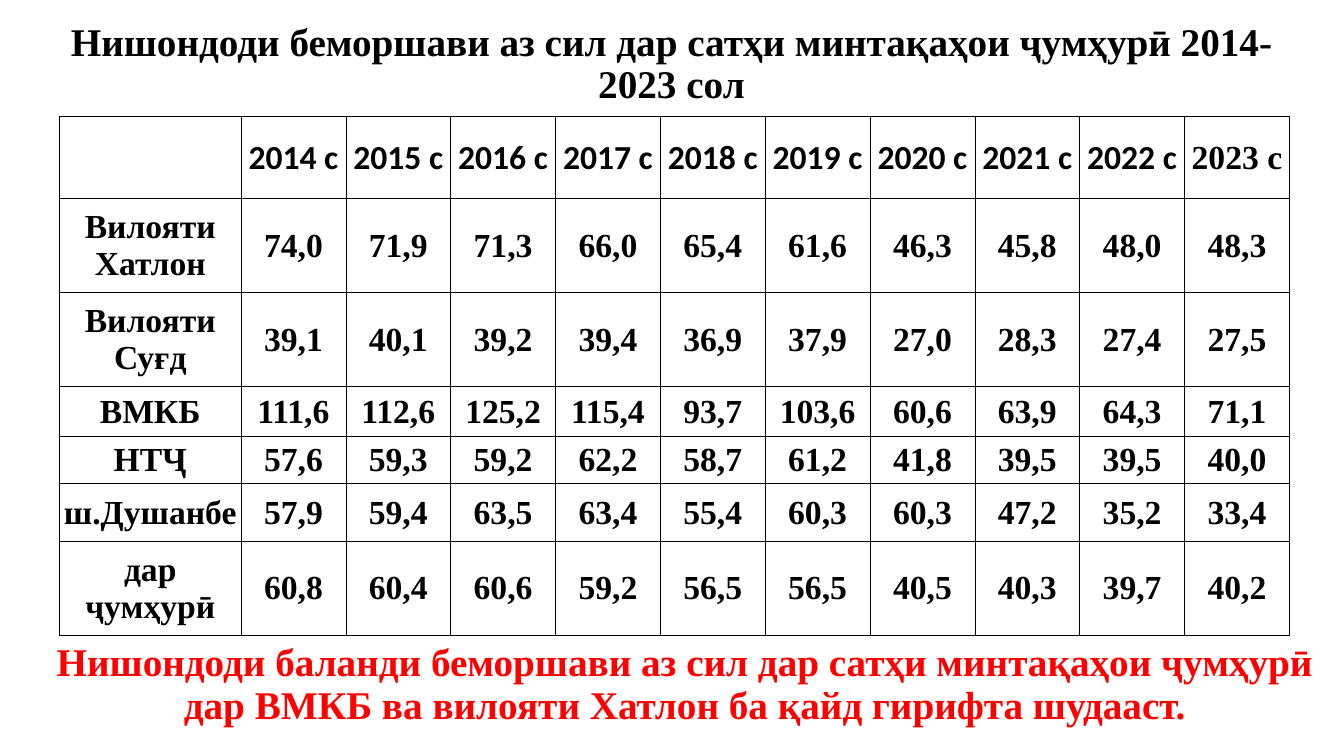
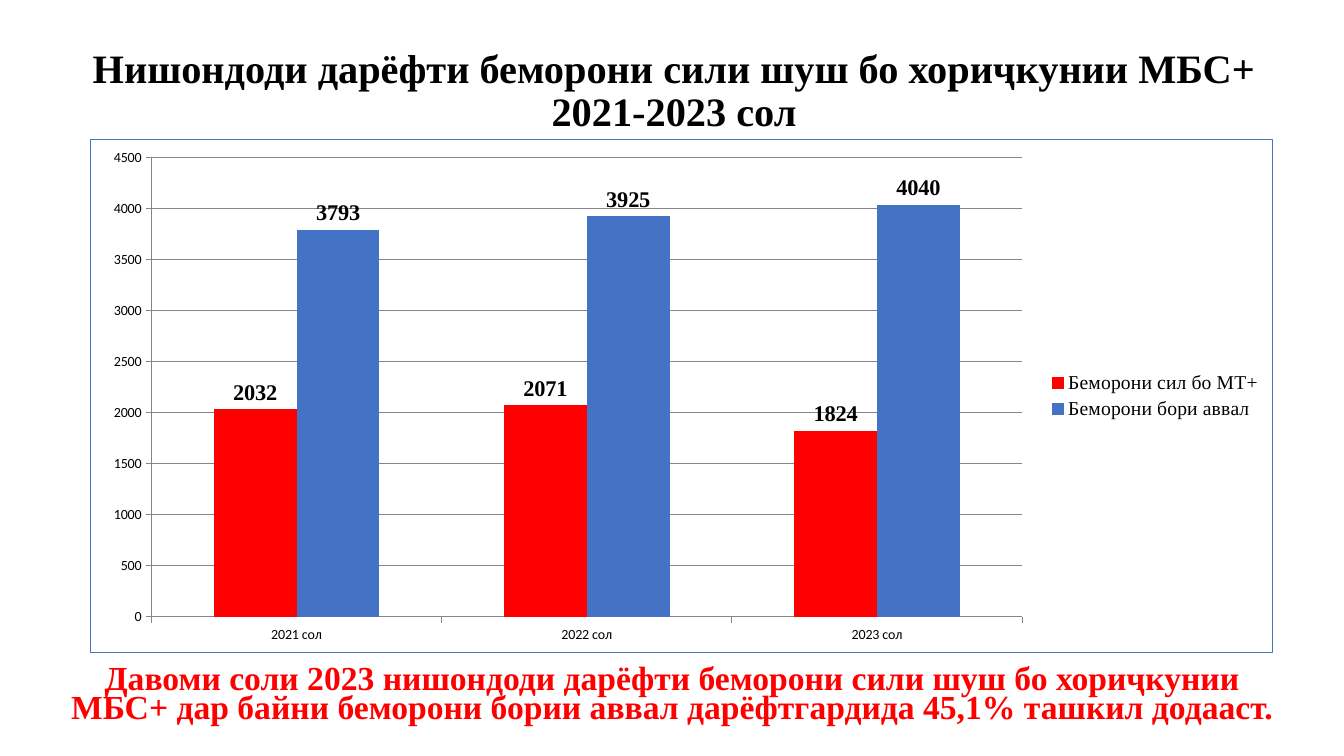
"""Build two slides on tuberculosis figures: a table by region and a column chart."""
from dataclasses import dataclass

from pptx import Presentation, util as u, oxml
from pptx.chart import data as cd
from pptx.dml import color as col
from pptx.enum import chart as ch, text as tx
from pptx.oxml import ns

PX = 9144


@dataclass(frozen=True)
class Theme:
    """Hold the colours, fonts and type sizes."""
    ink: str = "000000"
    red: str = "FF0000"
    blue: str = "4472C4"
    grid: str = "868686"
    serif: str = "Times New Roman"
    sans: str = "Calibri"
    head: float = 28
    large: float = 28.8
    cell: float = 24
    label: float = 16
    legend: float = 14
    axis: float = 10


T = Theme()

YEARS = [f"{y} c" for y in range(2014, 2023)] + ["2023 с"]
RATES = {
    "Вилояти Хатлон": "74,0 71,9 71,3 66,0 65,4 61,6 46,3 45,8 48,0 48,3",
    "Вилояти Суғд": "39,1 40,1 39,2 39,4 36,9 37,9 27,0 28,3 27,4 27,5",
    "ВМКБ": "111,6 112,6 125,2 115,4 93,7 103,6 60,6 63,9 64,3 71,1",
    "НТҶ": "57,6 59,3 59,2 62,2 58,7 61,2 41,8 39,5 39,5 40,0",
    "ш.Душанбе": "57,9 59,4 63,5 63,4 55,4 60,3 60,3 47,2 35,2 33,4",
    "дар ҷумҳурӣ": "60,8 60,4 60,6 59,2 56,5 56,5 40,5 40,3 39,7 40,2",
}
COLS = [180] + [104] * len(YEARS)
ROWS = [82, 93, 93, 50, 47, 57, 93]
CASES = {
    "Беморони сил бо МТ+": (T.red, (2032, 2071, 1824)),
    "Беморони бори аввал": (T.blue, (3793, 3925, 4040)),
}


def px(*nums):
    """Turn px lengths into EMU."""
    return [u.Emu(n * PX) for n in nums]


def put(obj, **vals):
    """Set each given attribute on an object."""
    for key, val in vals.items():
        setattr(obj, key, val)


def style(font, size, name=T.serif, tint=T.ink, bold=True):
    """Format a font."""
    put(font, size=u.Pt(size), name=name, bold=bold)
    font.color.rgb = col.RGBColor.from_string(tint)


def fill(frame, words, size, name=T.serif, tint=T.ink, gap=None):
    """Write one centred paragraph into a text frame."""
    para = frame.paragraphs[0]
    put(para, alignment=tx.PP_ALIGN.CENTER, line_spacing=gap)
    run = para.add_run()
    run.text = words
    style(run.font, size, name, tint)


def block(shape, box, words, size, tint=T.ink, gap=0.9):
    """Place a text shape and write its words."""
    left, top, width, height = px(*box)
    put(shape, left=left, top=top, width=width, height=height)
    put(shape.text_frame, word_wrap=True, auto_size=tx.MSO_AUTO_SIZE.NONE,
        vertical_anchor=tx.MSO_ANCHOR.MIDDLE)
    fill(shape.text_frame, words, size, tint=tint, gap=gap)


def page(deck, box, words, size):
    """Add a slide with its title."""
    slide = deck.slides.add_slide(deck.slide_layouts[5])
    block(slide.shapes.title, box, words, size)
    return slide


def note(slide, box, words, size, gap):
    """Add the red summary under the figures."""
    block(slide.shapes.add_textbox(*px(*box)), box, words, size, T.red, gap)


def line(tag, tint, width):
    """Return a solid line element."""
    return oxml.parse_xml(
        f'<a:{tag} {ns.nsdecls("a")} w="{int(u.Pt(width))}"><a:solidFill>'
        f'<a:srgbClr val="{tint}"/></a:solidFill></a:{tag}>')


def edge(cell):
    """Draw the four borders of a cell."""
    props = cell._tc.get_or_add_tcPr()
    for tag in ("lnL", "lnR", "lnT", "lnB"):
        props.append(line(tag, T.ink, 0.5))


def table(slide, left, top):
    """Add the table of rates by region and year."""
    rows = [["", *YEARS]] + [[k, *v.split()] for k, v in RATES.items()]
    box = px(left, top, sum(COLS), sum(ROWS))
    grid = slide.shapes.add_table(len(ROWS), len(COLS), *box).table
    put(grid, first_row=False, horz_banding=False)
    for part, size in zip(grid.columns, px(*COLS)):
        part.width = size
    for part, size in zip(grid.rows, px(*ROWS)):
        part.height = size
    side, none = px(1, 0)
    for r, row in enumerate(rows):
        for c, words in enumerate(row):
            cell = grid.cell(r, c)
            edge(cell)
            cell.fill.background()
            put(cell, margin_left=side, margin_right=side, margin_top=side,
                margin_bottom=none, vertical_anchor=tx.MSO_ANCHOR.MIDDLE)
            if words:
                name = T.sans if r == 0 and c < len(YEARS) else T.serif
                fill(cell.text_frame, words, T.cell, name)


def frame(chart):
    """Draw the border around a chart."""
    props = oxml.parse_xml(f'<c:spPr {ns.nsdecls("c", "a")}><a:noFill/></c:spPr>')
    props.append(line("ln", T.blue, 0.75))
    chart.element.find(ns.qn("c:chart")).addnext(props)


def graph(slide, box):
    """Add the column chart of cases by year."""
    data = cd.CategoryChartData()
    data.categories = [f"{y} сол" for y in range(2021, 2024)]
    for name, (_, vals) in CASES.items():
        data.add_series(name, vals)
    kind = ch.XL_CHART_TYPE.COLUMN_CLUSTERED
    chart = slide.shapes.add_chart(kind, *px(*box), data).chart
    style(chart.font, T.axis, T.sans, bold=False)
    put(chart, has_title=False, has_legend=True)
    put(chart.legend, position=ch.XL_LEGEND_POSITION.RIGHT, include_in_layout=False)
    style(chart.legend.font, T.legend, bold=False)
    plot = chart.plots[0]
    put(plot, gap_width=150, overlap=0, vary_by_categories=False)
    for bars, (tint, _) in zip(plot.series, CASES.values()):
        bars.format.fill.solid()
        bars.format.fill.fore_color.rgb = col.RGBColor.from_string(tint)
        tags = bars.data_labels
        put(tags, show_value=True, position=ch.XL_LABEL_POSITION.OUTSIDE_END)
        style(tags.font, T.label)
    axis = chart.value_axis
    put(axis, minimum_scale=0, maximum_scale=4500, major_unit=500,
        has_major_gridlines=True)
    for part in (axis, chart.category_axis):
        part.major_tick_mark = ch.XL_TICK_MARK.OUTSIDE
    for part in (axis, chart.category_axis, axis.major_gridlines):
        part.format.line.width = u.Pt(0.75)
        part.format.line.color.rgb = col.RGBColor.from_string(T.grid)
    frame(chart)


def main():
    """Build and save the slides."""
    deck = Presentation()
    wide, high = px(1333, 750)
    put(deck, slide_width=wide, slide_height=high)

    slide = page(deck, (32, 14, 1268, 100),
                 "Нишондоди беморшави аз сил дар сатҳи минтақаҳои ҷумҳурӣ "
                 "2014-2023 сол", T.head)
    table(slide, 59, 115)
    note(slide, (45, 630, 1268, 100),
         "Нишондоди баланди беморшави аз сил дар сатҳи минтақаҳои ҷумҳурӣ "
         "дар ВМКБ ва вилояти Хатлон ба қайд гирифта шудааст.", T.head, 0.9)

    slide = page(deck, (57, 40, 1223, 102),
                 "Нишондоди дарёфти беморони сили шуш бо хориҷкунии МБС+ "
                 "2021-2023 сол", T.large)
    note(slide, (55, 648, 1223, 86),
         "Давоми соли 2023 нишондоди дарёфти беморони сили шуш бо хориҷкунии "
         "МБС+ дар байни беморони бории аввал дарёфтгардида 45,1% ташкил "
         "додааст.", T.cell, 0.7)
    graph(slide, (89, 138, 1174, 510))

    deck.save("out.pptx")


if __name__ == "__main__":
    main()
